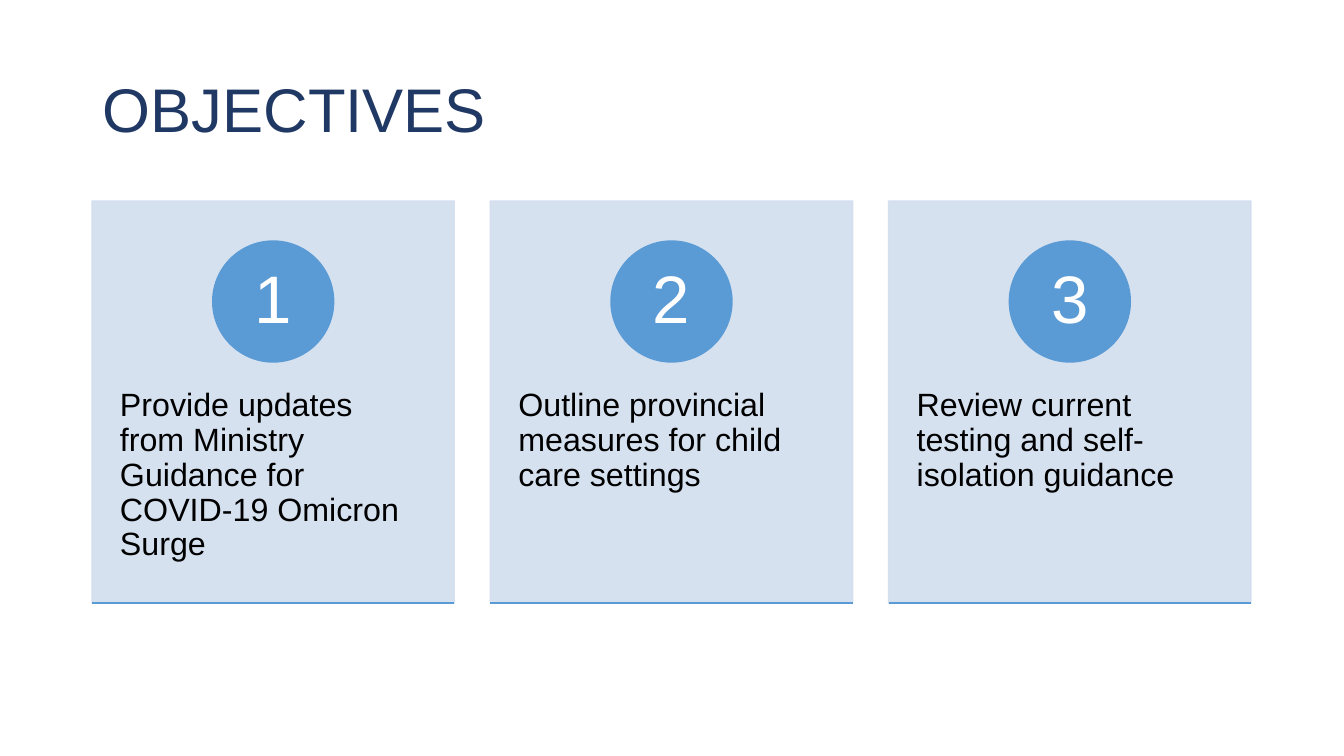
import pptx
import pptx.util
import pptx.dml.color
import pptx.enum.shapes
import pptx.enum.text
import pptx.oxml
import pptx.oxml.ns
import lxml.etree

SCALE = 914400 / 100.8
BLUE = "5B9BD5"
PALE = "D2DEEF"
OBJECTIVES = [
    "Provide updates from Ministry Guidance for COVID-19 Omicron Surge",
    "Outline provincial measures for child care settings",
    "Review current testing and self-isolation guidance",
]


def px(n):
    return pptx.util.Emu(round(n * SCALE))


def rgb(value):
    return pptx.dml.color.RGBColor.from_string(value)


def sub(parent, tag, **attrs):
    return lxml.etree.SubElement(parent, pptx.oxml.ns.qn(tag), attrs)


def write(sp, text, size, color, anchor="TOP", align="LEFT", inset=(10, 5)):
    tf = sp.text_frame
    tf.word_wrap = True
    tf.vertical_anchor = getattr(pptx.enum.text.MSO_ANCHOR, anchor)
    tf.margin_left = tf.margin_right = px(inset[0])
    tf.margin_top = tf.margin_bottom = px(inset[1])
    p = tf.paragraphs[0]
    p.alignment = getattr(pptx.enum.text.PP_ALIGN, align)
    p.line_spacing = 0.9
    r = p.add_run()
    r.text = text
    r.font.name = "Arial"
    r.font.size = pptx.util.Pt(size)
    r.font.color.rgb = rgb(color)


def add_text(s, box, text, **fmt):
    write(s.shapes.add_textbox(*map(px, box)), text, **fmt)


def add_solid(s, kind, box, color, alpha=100):
    shape_type = getattr(pptx.enum.shapes.MSO_SHAPE, kind)
    sp = s.shapes.add_shape(shape_type, *map(px, box))
    sp.shadow.inherit = False
    sp.fill.solid()
    sp.fill.fore_color.rgb = rgb(color)
    sp.line.color.rgb = rgb(color)
    sp.line.width = pptx.util.Pt(1)
    if alpha < 100:
        for clr in sp.element.spPr.iter(pptx.oxml.ns.qn("a:srgbClr")):
            sub(clr, "a:alpha", val=str(alpha * 1000))
    return sp


def add_rule(s, x, y, w):
    line = s.shapes.add_connector(
        pptx.enum.shapes.MSO_CONNECTOR.STRAIGHT, px(x), px(y), px(x + w), px(y))
    line.line.color.rgb = rgb(BLUE)
    line.line.width = pptx.util.Pt(1)
    sub(line.element.spPr, "a:effectLst")


def add_card(s, box, number, text):
    x, y, w, h = box
    d = 121
    add_solid(s, "RECTANGLE", box, PALE, alpha=90)
    add_text(s, (x, y + 152, w, 241), text, size=23, color="000000", inset=(28, 36))
    badge = add_solid(s, "OVAL", (x + (w - d) / 2, y + 40, d, d), BLUE)
    write(badge, str(number), size=48, color="FFFFFF",
          anchor="MIDDLE", align="CENTER", inset=(9, 1))
    add_rule(s, x, y + h, w)


def add_cards(s, box, texts, gap):
    x, y, w, h = box
    card_w = (w - gap * (len(texts) - 1)) / len(texts)
    for i, text in enumerate(texts):
        add_card(s, (x + i * (card_w + gap), y, card_w, h), i + 1, text)


def main():
    prs = pptx.Presentation()
    prs.slide_width, prs.slide_height = px(1344), px(756)
    s = prs.slides.add_slide(prs.slide_layouts[6])
    add_text(s, (93, 40, 1159, 146), "OBJECTIVES", size=44, color="203864",
             anchor="MIDDLE")
    add_cards(s, (92, 201, 1159, 402), OBJECTIVES, gap=36)
    prs.save("out.pptx")


if __name__ == "__main__":
    main()
